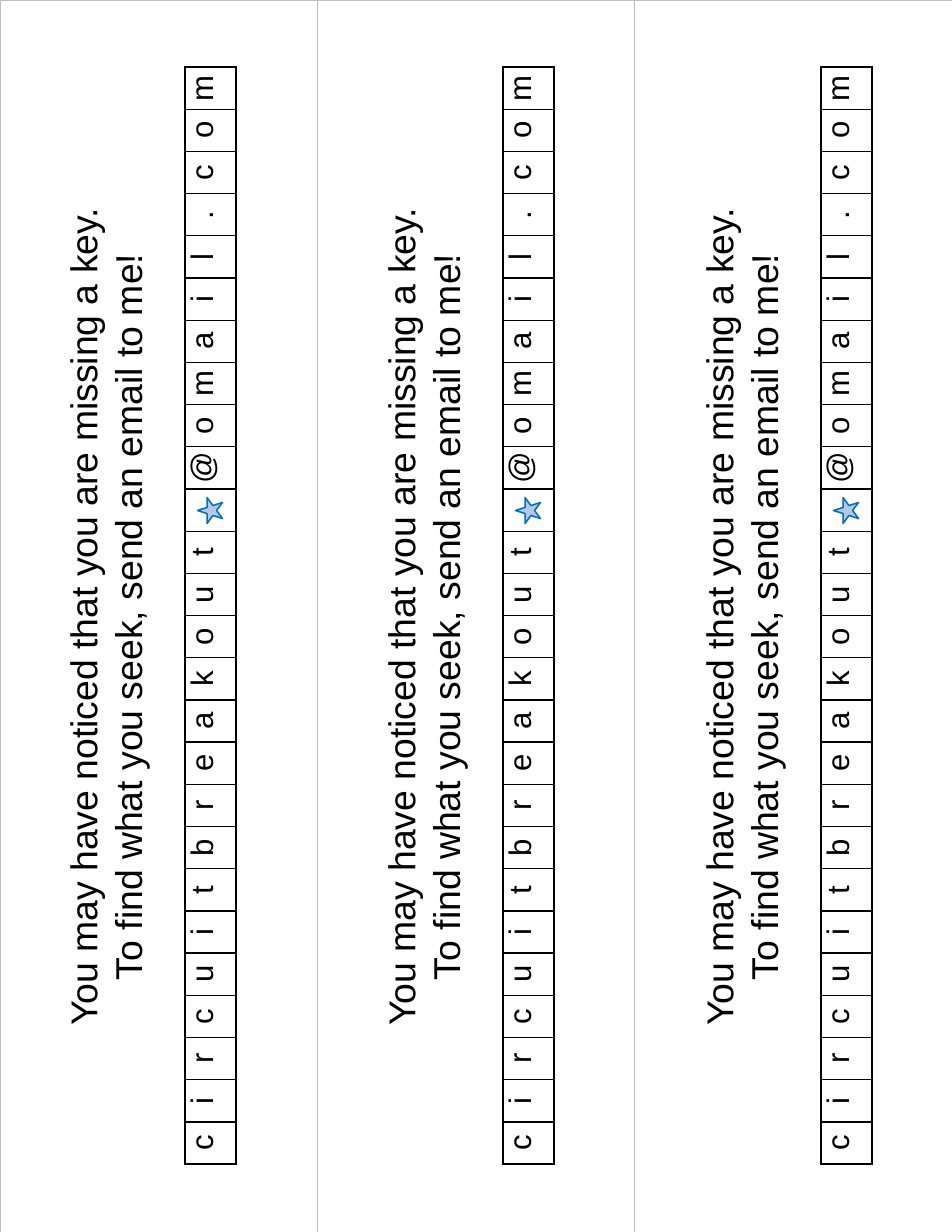
from lxml import etree
from pptx import Presentation
from pptx.dml.color import RGBColor
from pptx.enum.shapes import MSO_SHAPE
from pptx.enum.text import MSO_ANCHOR, MSO_AUTO_SIZE, PP_ALIGN
from pptx.oxml.ns import qn
from pptx.util import Pt

STAR = MSO_SHAPE.STAR_5_POINT
MIDDLE = MSO_ANCHOR.MIDDLE
GROW = MSO_AUTO_SIZE.SHAPE_TO_FIT_TEXT
CENTER = PP_ALIGN.CENTER

SCALE = 914400 / 112
WIDE, HIGH = 952, 1232
CARDS, PITCH = 3, 318
BLACK, GRAY, BLUE, PALE = "000000", "BFBFBF", "0070C0", "B4C7E7"
LINES = [
    "You may have noticed that you are missing a key.",
    "To find what you seek, send an email to me!",
]
MAIL = "circuitbreakout @omail.com"


def emu(px):
    return round(px * SCALE)


def tint(code):
    return RGBColor.from_string(code)


class Sheet:
    font = "Arial"
    ink = BLACK

    def __init__(self, slide):
        self.slide = slide

    def add_text(self, para, text, size):
        para.alignment = CENTER
        run = para.add_run()
        run.text = text
        run.font.name = self.font
        run.font.size = Pt(size)
        run.font.color.rgb = tint(self.ink)

    def border(self, cell, color, width):
        props = cell._tc.get_or_add_tcPr()
        for side in ("a:lnL", "a:lnR", "a:lnT", "a:lnB"):
            line = etree.SubElement(props, qn(side), w=str(Pt(width)))
            fill = etree.SubElement(line, qn("a:solidFill"))
            etree.SubElement(fill, qn("a:srgbClr"), val=color)

    def grid(self, rows, cols, left, top, width, height, color, weight):
        frame = self.slide.shapes.add_table(
            rows, cols, emu(left), emu(top), emu(width), emu(height))
        table = frame.table
        table.first_row = False
        table.horz_banding = False
        for cell in table.iter_cells():
            self.border(cell, color, weight)
            cell.fill.background()
        return table

    def strip(self, text, left, top, width, height):
        table = self.grid(len(text), 1, left, top, width, height, BLACK, 1)
        for cell, char in zip(table.iter_cells(), reversed(text)):
            cell.margin_left = cell.margin_right = 0
            cell.margin_top = cell.margin_bottom = 0
            cell.vertical_anchor = MIDDLE
            cell._tc.get_or_add_tcPr().set("vert", "vert270")
            if char != " ":
                self.add_text(cell.text_frame.paragraphs[0], char, 20)

    def label(self, lines, left, top, width, height):
        box = self.slide.shapes.add_textbox(
            emu(left), emu(top), emu(width), emu(height))
        box.rotation = 270
        frame = box.text_frame
        frame.word_wrap = False
        frame.auto_size = GROW
        for i, line in enumerate(lines):
            para = frame.add_paragraph() if i else frame.paragraphs[0]
            self.add_text(para, line, 24)

    def star(self, left, top, width, height):
        shape = self.slide.shapes.add_shape(
            STAR, emu(left), emu(top), emu(width), emu(height))
        shape.rotation = 270
        shape.shadow.inherit = False
        shape.fill.solid()
        shape.fill.fore_color.rgb = tint(PALE)
        shape.line.color.rgb = tint(BLUE)
        shape.line.width = Pt(1)


def main():
    deck = Presentation()
    deck.slide_width, deck.slide_height = emu(WIDE), emu(HIGH)
    sheet = Sheet(deck.slides.add_slide(deck.slide_layouts[6]))
    sheet.grid(1, CARDS, 0, 0, WIDE, HIGH, GRAY, 0.5)
    for i in range(CARDS):
        left = i * PITCH
        sheet.label(LINES, left - 317, 566, 845, 102)
        sheet.strip(MAIL, left + 185, 67, 51, 1098)
        sheet.star(left + 197, 498, 26, 25)
    deck.save("out.pptx")


if __name__ == "__main__":
    main()
